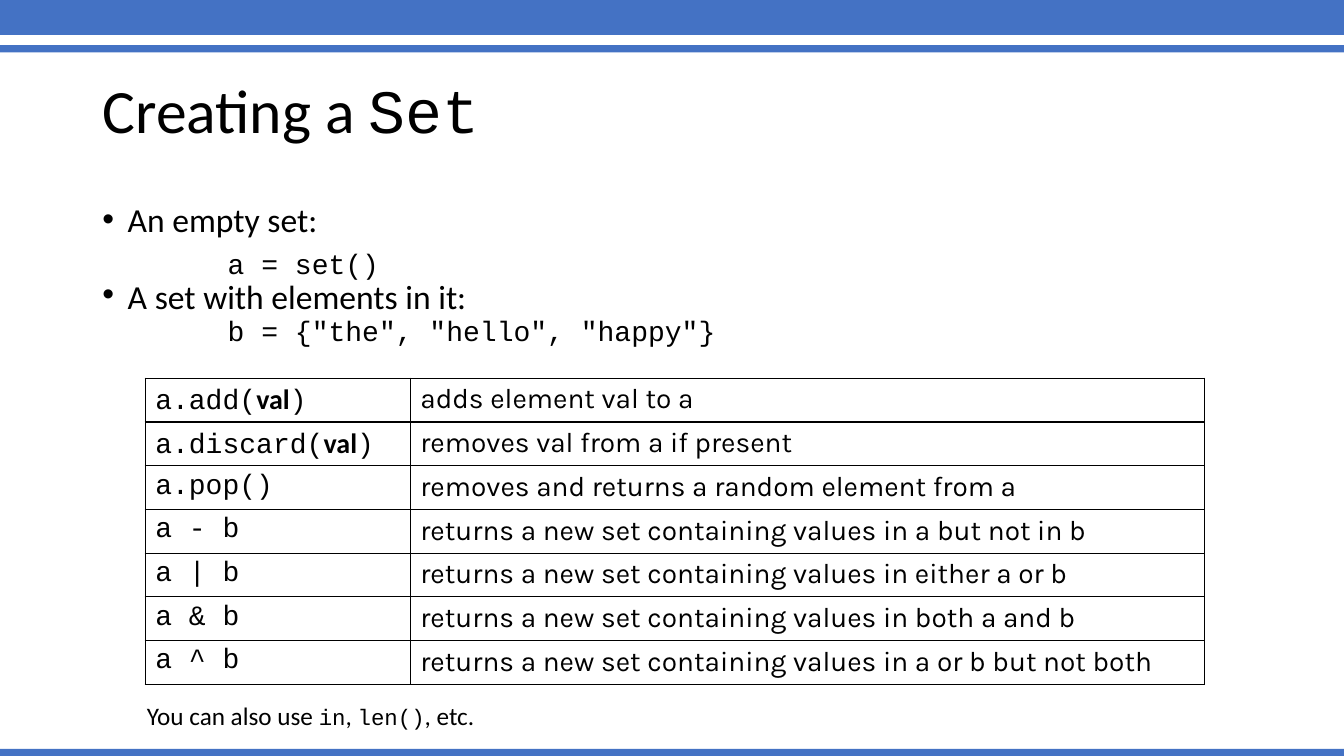
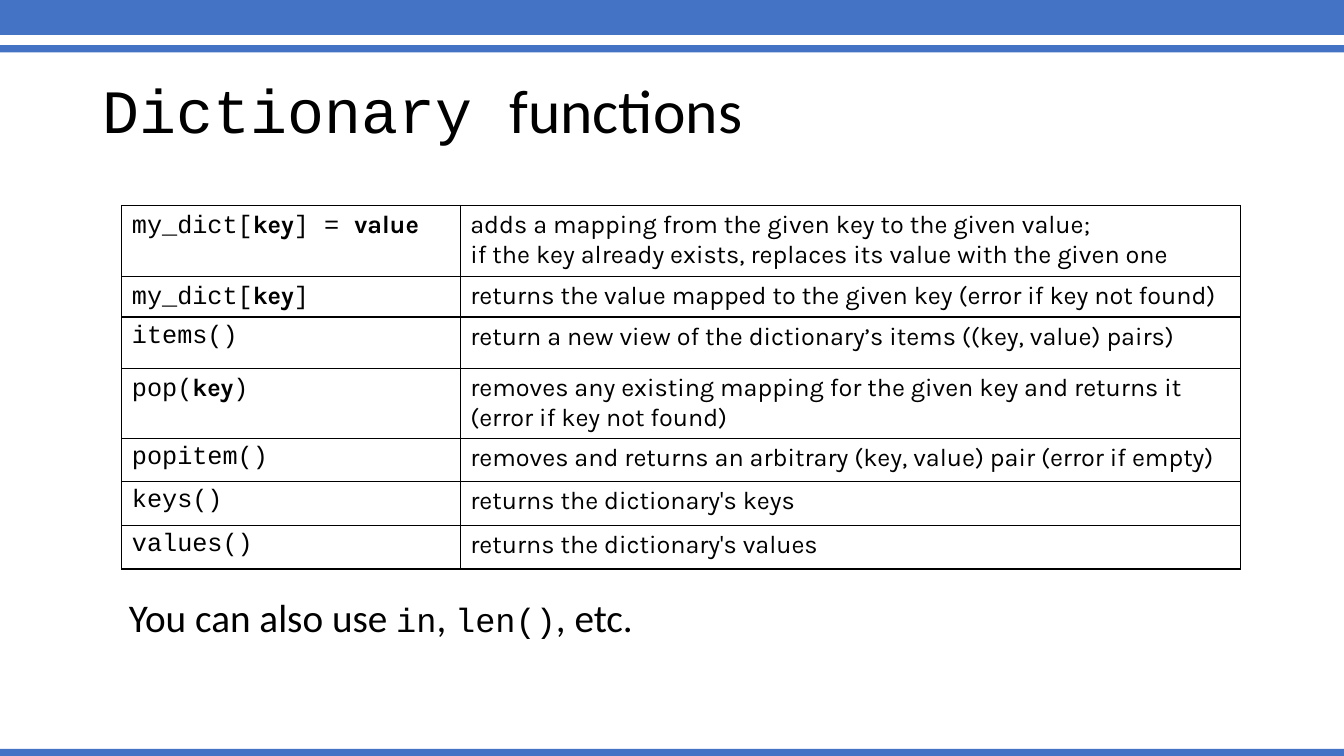
"""Build two slides on Python set and dictionary functions."""
from lxml import etree
from pptx import Presentation
from pptx import util as u
from pptx.dml.color import RGBColor
from pptx.enum import shapes, text
from pptx.oxml import ns


class Theme:
    blue = RGBColor(0x44, 0x72, 0xC4)
    black = RGBColor(0, 0, 0)
    sans, mono, karla = "Calibri", "Courier New", "Karla"
    title, lead, code, hint = 44, 24, 20, 18
    wide, high = u.Cm(33.87), u.Cm(19.05)


def put(para, words, main, other=None):
    """Write words; parts between stars take the other style."""
    para.clear()
    for i, part in enumerate(words.split("*")):
        if part:
            run = para.add_run()
            run.text = part
            name, size, bold = other if i % 2 else main
            run.font.name, run.font.size, run.font.bold = name, u.Pt(size), bold
            run.font.color.rgb = Theme.black


def grid(slide, left, top, cols, highs, rows, size, arg):
    """Draw a bordered table of code and meaning."""
    frame = slide.shapes.add_table(len(rows), len(cols), u.Cm(left), u.Cm(top),
                                   u.Cm(sum(cols)), u.Cm(sum(highs)))
    table = frame.table
    table.first_row = table.horz_banding = False
    for col, wide in zip(table.columns, cols):
        col.width = u.Cm(wide)
    looks = ((Theme.mono, size, False), (Theme.karla, size, False))
    for row, high, texts in zip(table.rows, highs, rows):
        row.height = u.Cm(high)
        for cell, words, look in zip(row.cells, texts, looks):
            cell.text_frame.text = words
            for para in cell.text_frame.paragraphs:
                put(para, para.text, look, (arg, size, True))
            props = cell._tc.get_or_add_tcPr()
            for side in ("lnL", "lnR", "lnT", "lnB"):
                line = etree.SubElement(props, ns.qn("a:" + side), w=str(u.Pt(1)))
                fill = etree.SubElement(line, ns.qn("a:solidFill"))
                etree.SubElement(fill, ns.qn("a:srgbClr"), val=str(Theme.black))
            cell.fill.background()


deck = Presentation()
deck.slide_width, deck.slide_height = Theme.wide, Theme.high
base = deck.slide_layouts[5]
head = base.placeholders[0]
head.left, head.top = u.Cm(2.33), u.Cm(1.02)
head.width, head.height = u.Cm(29.21), u.Cm(3.68)

pages = []
for words in ("Creating a *Set*", "*Dictionary *functions"):
    page = deck.slides.add_slide(base)
    frame = page.shapes.title.text_frame
    frame.vertical_anchor = text.MSO_ANCHOR.MIDDLE
    frame.auto_size = text.MSO_AUTO_SIZE.NONE
    para = frame.paragraphs[0]
    para.alignment = text.PP_ALIGN.LEFT
    para.line_spacing = 0.9
    put(para, words, (Theme.sans, Theme.title, False),
        (Theme.mono, Theme.title, False))
    pages.append(page)
sets, dicts = pages

for top, high in ((0, 0.88), (1.14, 0.18), (18.87, 0.18)):
    band = sets.shapes.add_shape(shapes.MSO_SHAPE.RECTANGLE, 0, u.Cm(top),
                                 Theme.wide, u.Cm(high))
    band.shadow.inherit = False
    band.fill.solid()
    band.fill.fore_color.rgb = Theme.blue
    band.line.fill.background()
    base.shapes.element.insert(2, band.element)

body = sets.shapes.add_textbox(u.Cm(2.33), u.Cm(5.08), u.Cm(29.21), u.Cm(4.2))
frame = body.text_frame
frame.word_wrap = True
lines = (
    ("An empty set:", True, 0.8),
    ("a = set()", False, 0.8),
    ("A set with elements in it:", True, 0.5),
    ('b = {"the", "hello", "happy"}', False, 0.5),
)
frame.text = "\n".join(line[0] for line in lines)
for para, (words, lead, gap) in zip(frame.paragraphs, lines):
    look = (Theme.sans, Theme.lead) if lead else (Theme.mono, Theme.code)
    put(para, words, (*look, False))
    para.line_spacing, para.space_before = gap, u.Pt(10)
    props = para._p.get_or_add_pPr()
    props.set("marL", str(u.Cm(0.64 if lead else 3.16)))
    props.set("indent", str(u.Cm(-0.64 if lead else 0)))
    if lead:
        etree.SubElement(props, ns.qn("a:buFont"), typeface="Arial")
        etree.SubElement(props, ns.qn("a:buChar"), char="•")

grid(sets, 3.66, 9.53, (6.68, 20.02), [1.1] * 7, (
    ("a.add(*val*)", "adds element val to a"),
    ("a.discard(*val*)", "removes val from a if present"),
    ("a.pop()", "removes and returns a random element from a"),
    ("a - b", "returns a new set containing values in a but not in b"),
    ("a | b", "returns a new set containing values in either a or b"),
    ("a & b", "returns a new set containing values in both a and b"),
    ("a ^ b", "returns a new set containing values in a or b but not both"),
), Theme.code, Theme.sans)

grid(dicts, 3.07, 5.18, (8.53, 19.66), (1.78, 1.02, 1.3, 1.75, 1.1, 1.1, 1.1), (
    ("my_dict[*key*] = *value*",
     "adds a mapping from the given key to the given value;\n"
     "if the key already exists, replaces its value with the given one"),
    ("my_dict[*key*]",
     "returns the value mapped to the given key (error if key not found)"),
    ("items()", "return a new view of the dictionary’s items ((key, value) pairs)"),
    ("pop(*key*)", "removes any existing mapping for the given key and returns it "
     "(error if key not found)"),
    ("popitem()",
     "removes and returns an arbitrary (key, value) pair (error if empty)"),
    ("keys()", "returns the dictionary's keys"),
    ("values()", "returns the dictionary's values"),
), Theme.hint, Theme.karla)

notes = (
    (sets, (3.45, 17.53, 8.86, 1.02), 18, 16, False, text.MSO_ANCHOR.TOP, 1.0),
    (dicts, (3, 13.79, 28.55, 3.68), 28, 24, True, text.MSO_ANCHOR.MIDDLE, 0.9),
)
for page, place, size, small, wrap, anchor, gap in notes:
    note = page.shapes.add_textbox(*map(u.Cm, place))
    frame = note.text_frame
    frame.word_wrap, frame.vertical_anchor = wrap, anchor
    para = frame.paragraphs[0]
    para.line_spacing = gap
    put(para, "You can also use *in*, *len()*, etc.", (Theme.sans, size, False),
        (Theme.mono, small, False))

deck.save("out.pptx")
